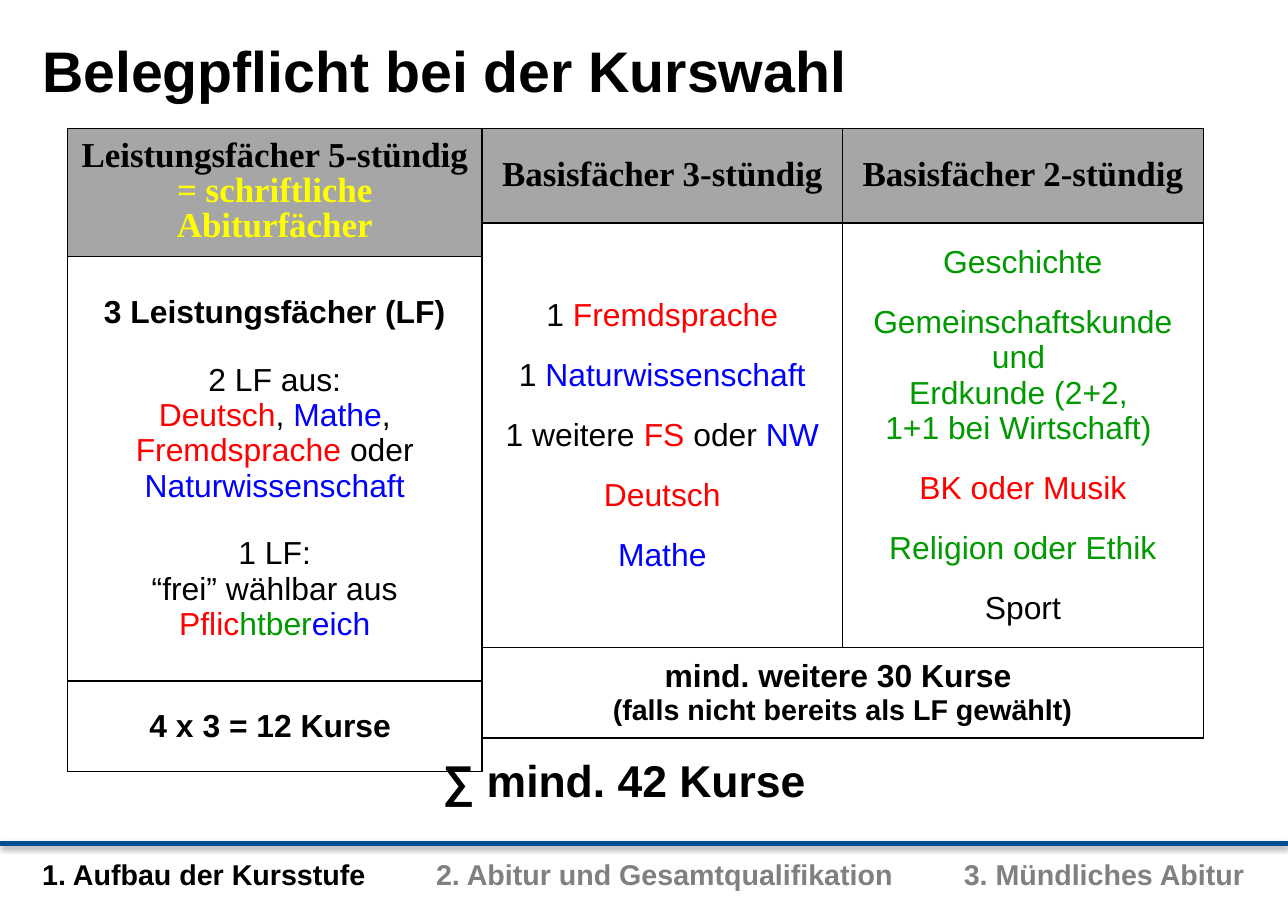
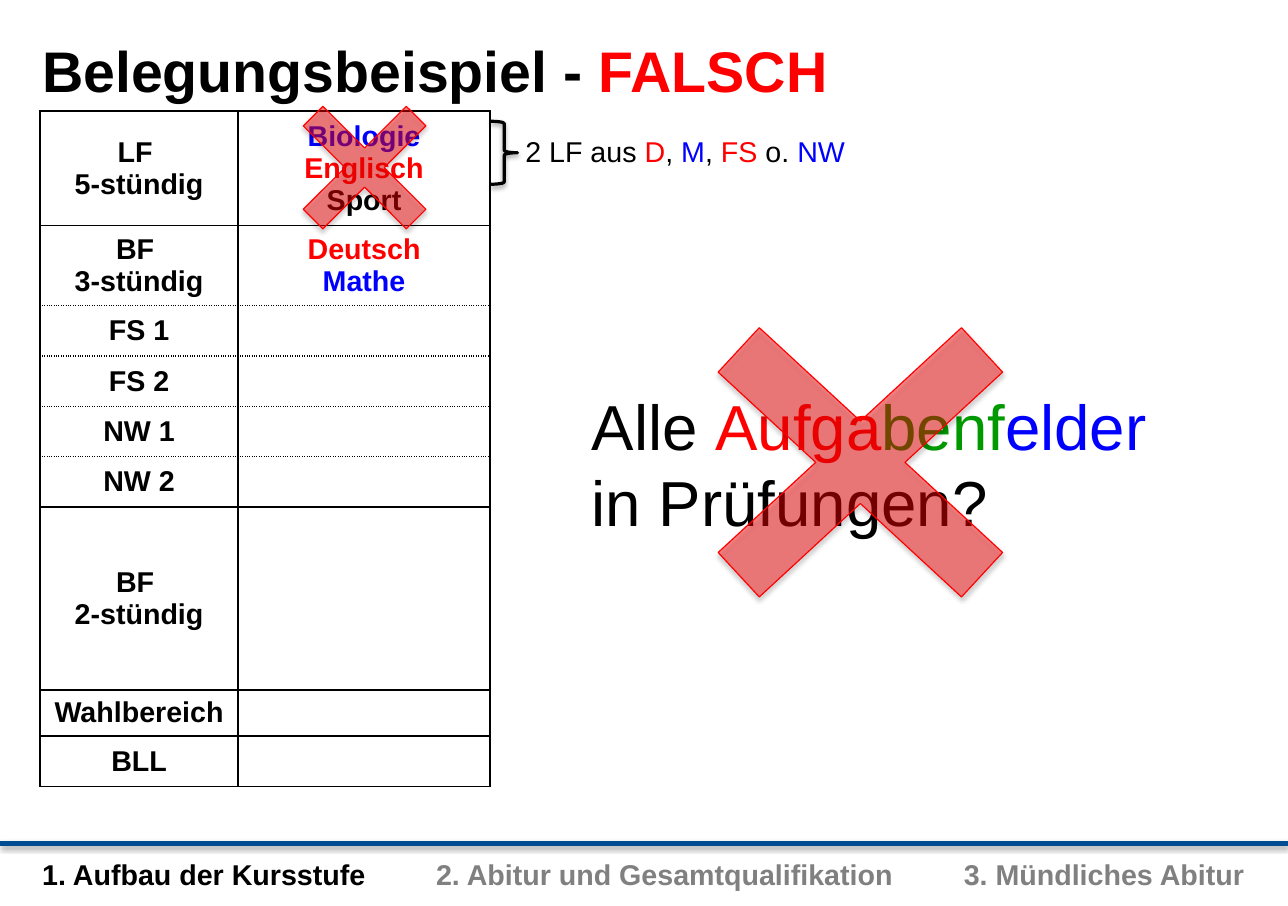
from dataclasses import dataclass
from lxml.etree import SubElement
from pptx import Presentation
from pptx.dml.color import RGBColor
from pptx.enum.shapes import MSO_CONNECTOR, MSO_SHAPE
from pptx.enum.text import MSO_ANCHOR, PP_ALIGN
from pptx.oxml.ns import qn
from pptx.util import Inches, Pt


@dataclass(frozen=True)
class Theme:
    black: str = "000000"
    red: str = "FF0000"
    green: str = "009900"
    blue: str = "0000FF"
    yellow: str = "FFFF00"
    grey: str = "808080"
    head_fill: str = "A6A6A6"
    rule: str = "004E91"
    sans: str = "Arial"
    serif: str = "Times New Roman"
    title: int = 36
    question: int = 40
    total: int = 28
    head: int = 22
    body: int = 20
    small: int = 18
    tight: float = 0.9


T = Theme()
WIDTH, HEIGHT = 11.25, 95 / 12


@dataclass
class Para:
    """Runs are plain strings (black) or (text, colour) pairs."""
    runs: list
    size: int = T.body
    bold: bool = False
    gap: float = 0
    font: str = T.sans
    spacing: float = 0


# Text and drawing helpers
def rgb(colour):
    return RGBColor.from_string(colour)


def write(tf, paras, align=PP_ALIGN.LEFT):
    for i, para in enumerate(paras):
        p = tf.paragraphs[0] if i == 0 else tf.add_paragraph()
        p.alignment = align
        if para.spacing:
            p.line_spacing = para.spacing
        if para.gap:
            p.space_before = Pt(para.gap)
        for run in para.runs:
            text, colour = (run, T.black) if isinstance(run, str) else run
            r = p.add_run()
            r.text = text
            r.font.name, r.font.size, r.font.bold = para.font, Pt(para.size), para.bold
            r.font.color.rgb = rgb(colour)


def add_text(s, box, para, align=PP_ALIGN.LEFT):
    tf = s.shapes.add_textbox(*map(Inches, box)).text_frame
    tf.word_wrap = True
    write(tf, [para], align)
    return tf


def add_shadow(sp, opacity, distance):
    effects = SubElement(sp._element.spPr, qn("a:effectLst"))
    shadow = SubElement(effects, qn("a:outerShdw"), blurRad=str(Pt(3.1)),
                        dist=str(Pt(distance)), dir="5400000", rotWithShape="0")
    colour = SubElement(shadow, qn("a:srgbClr"), val=T.black)
    SubElement(colour, qn("a:alpha"), val=str(opacity * 1000))


def add_border(cell, dotted_sides=""):
    tcPr = cell._tc.get_or_add_tcPr()
    for side in "LRTB":
        ln = SubElement(tcPr, qn(f"a:ln{side}"), w=str(Pt(1)))
        fill = SubElement(ln, qn("a:solidFill"))
        SubElement(fill, qn("a:srgbClr"), val=T.black)
        dash = "sysDot" if side in dotted_sides else "solid"
        SubElement(ln, qn("a:prstDash"), val=dash)


def add_grid(s, x, y, cols, rows, content, head=False, dotted=None):
    """Table of centred cells; dotted maps a row to its dotted sides."""
    shape = s.shapes.add_table(len(rows), len(cols), Inches(x), Inches(y),
                               Inches(sum(cols)), Inches(sum(rows)))
    table = shape.table
    table.first_row = table.horz_banding = False
    for col, width in zip(table.columns, cols):
        col.width = Inches(width)
    for i, height in enumerate(rows):
        table.rows[i].height = Inches(height)
        for j in range(len(cols)):
            cell = table.cell(i, j)
            cell.vertical_anchor = MSO_ANCHOR.MIDDLE
            add_border(cell, (dotted or {}).get(i, ""))
            if head and i == 0:
                cell.fill.solid()
                cell.fill.fore_color.rgb = rgb(T.head_fill)
            else:
                cell.fill.background()
            if j < len(content[i]):
                write(cell.text_frame, content[i][j], PP_ALIGN.CENTER)
    return table


# Shared frame: title, rule and chapter footer
def add_frame(prs, title_runs):
    s = prs.slides.add_slide(prs.slide_layouts[6])
    add_text(s, (0.27, 0.26, 10.63, 0.71), Para(title_runs, T.title, True))

    rule_y = Inches(7.37)
    rule = s.shapes.add_connector(MSO_CONNECTOR.STRAIGHT, 0, rule_y, Inches(WIDTH), rule_y)
    rule.line.color.rgb, rule.line.width = rgb(T.rule), Pt(3)
    add_shadow(rule, 38, 1.6)

    chapters = ["1. Aufbau der Kursstufe",
                ("\t2. Abitur und Gesamtqualifikation", T.grey),
                ("\t3. Mündliches Abitur", T.grey)]
    tf = add_text(s, (0.27, 7.47, 10.98, 0.38),
                  Para(chapters, T.small, True, spacing=T.tight))
    tabs = SubElement(tf.paragraphs[0]._p.get_or_add_pPr(), qn("a:tabLst"))
    for pos in (3.44, 8.05):
        SubElement(tabs, qn("a:tab"), pos=str(Inches(pos)), algn="l")
    return s


# Slide 1: compulsory courses
def header(*runs):
    return [Para([run], T.head, True, font=T.serif, spacing=T.tight) for run in runs]


def spaced(*paras, gap=15.5):
    return [Para(runs, gap=gap if i else 0) for i, runs in enumerate(paras)]


def add_advanced_table(s, x, y):
    subjects = [
        Para(["3 Leistungsfächer (LF)"], bold=True),
        Para(["2 LF aus:"], gap=20),
        Para([("Deutsch", T.red), ", ", ("Mathe", T.blue), ", ",
              ("Fremdsprache ", T.red), "oder ", ("Naturwissenschaft", T.blue)]),
        Para(["1 LF:"], gap=20),
        Para(["“frei” wählbar aus ", ("Pflic", T.red), ("htber", T.green),
              ("eich", T.blue)]),
    ]
    add_grid(s, x, y, [3.62], [1.12, 3.71, 0.79], [
        [header("Leistungsfächer 5-stündig", ("= schriftliche Abiturfächer", T.yellow))],
        [subjects],
        [[Para(["4 x 3 = 12 Kurse "], bold=True)]],
    ], head=True)


def add_basic_table(s, x, y):
    three_hours = spaced(
        ["1 ", ("Fremdsprache", T.red)],
        ["1 ", ("Naturwissenschaft", T.blue)],
        ["1 weitere ", ("FS ", T.red), "oder ", ("NW", T.blue)],
        [("Deutsch", T.red)],
        [("Mathe", T.blue)])
    two_hours = spaced([("Geschichte", T.green)], [("Gemeinschaftskunde und ", T.green)])
    two_hours += [Para([(line, T.green)])
                  for line in ("Erdkunde (2+2, ", "1+1 bei Wirtschaft) ")]
    two_hours += [Para([run], gap=15.5) for run in (
        ("BK oder Musik", T.red), ("Religion oder Ethik", T.green), "Sport")]
    total = [Para(["mind. weitere 30 Kurse "], bold=True),
             Para(["(falls nicht bereits als LF gewählt)"], T.small, True)]
    table = add_grid(s, x, y, [3.15, 3.15], [0.83, 3.71, 0.79], [
        [header("Basisfächer 3-stündig"), header("Basisfächer 2-stündig")],
        [three_hours, two_hours],
        [total],
    ], head=True)
    table.cell(2, 0).merge(table.cell(2, 1))


def build_requirements(prs):
    s = add_frame(prs, ["Belegpflicht bei der Kurswahl"])
    left, top = 0.59, 1.12
    add_advanced_table(s, left, top)
    add_basic_table(s, left + 3.62, top)
    add_text(s, (3.42, 6.53, 4.17, 0.57),
             Para(["∑ mind. 42 Kurse "], T.total, True), PP_ALIGN.CENTER)


# Slide 2: wrong example
def add_example_table(s, x, y):
    def lines(*runs):
        return [Para([run], T.small, True) for run in runs]

    content = [
        [lines("LF ", "5-stündig"),
         lines(("Biologie", T.blue), ("Englisch", T.red), "Sport")],
        [lines("BF ", "3-stündig"), lines(("Deutsch", T.red), ("Mathe", T.blue))],
        *[[lines(name)] for name in ("FS 1", "FS 2", "NW 1", "NW 2")],
        [lines("BF ", "2-stündig")],
        [lines("Wahlbereich")],
        [lines("BLL")],
    ]
    dotted = {1: "B", 2: "TB", 3: "TB", 4: "TB", 5: "T"}
    add_grid(s, x, y, [1.73, 2.2], [1, 0.7] + [0.44] * 4 + [1.6, 0.4, 0.44],
             content, dotted=dotted)


def add_brace_note(s, x, y):
    add_text(s, (x + 0.2, y + 0.06, 3.74, 0.41), Para([
        "2 LF aus ", ("D", T.red), ", ", ("M", T.blue), ", ",
        ("FS ", T.red), "o. ", ("NW", T.blue)], T.small))
    brace = s.shapes.add_shape(MSO_SHAPE.RIGHT_BRACE, *map(Inches, (x, y, 0.23, 0.55)))
    brace.fill.background()
    brace.line.color.rgb, brace.line.width = rgb(T.black), Pt(2)
    add_shadow(brace, 38, 1.6)


def add_cross(s, *box):
    cross = s.shapes.add_shape(MSO_SHAPE.MATH_MULTIPLY, *map(Inches, box))
    cross.adjustments[0] = 0.14
    cross.fill.solid()
    cross.fill.fore_color.rgb = rgb(T.red)
    colour = cross._element.spPr.find(qn("a:solidFill")).find(qn("a:srgbClr"))
    SubElement(colour, qn("a:alpha"), val="45000")
    cross.line.color.rgb, cross.line.width = rgb(T.red), Pt(0.75)
    add_shadow(cross, 35, 1.8)


def build_wrong_example(prs):
    s = add_frame(prs, ["Belegungsbeispiel - ", ("FALSCH", T.red)])
    add_example_table(s, 0.35, 0.97)
    add_brace_note(s, 4.29, 1.06)
    add_text(s, (5.07, 3.33, 5.12, 1.45), Para([
        "Alle ", ("Aufga", T.red), ("benf", T.green), ("elder", T.blue),
        " in Prüfungen?"], T.question))
    add_cross(s, 5.47, 2.15, 4.09, 3.78)
    add_cross(s, 2.32, 0.6, 1.73, 1.73)


def main():
    prs = Presentation()
    prs.slide_width, prs.slide_height = Inches(WIDTH), Inches(HEIGHT)
    build_requirements(prs)
    build_wrong_example(prs)
    prs.save("out.pptx")


if __name__ == "__main__":
    main()
